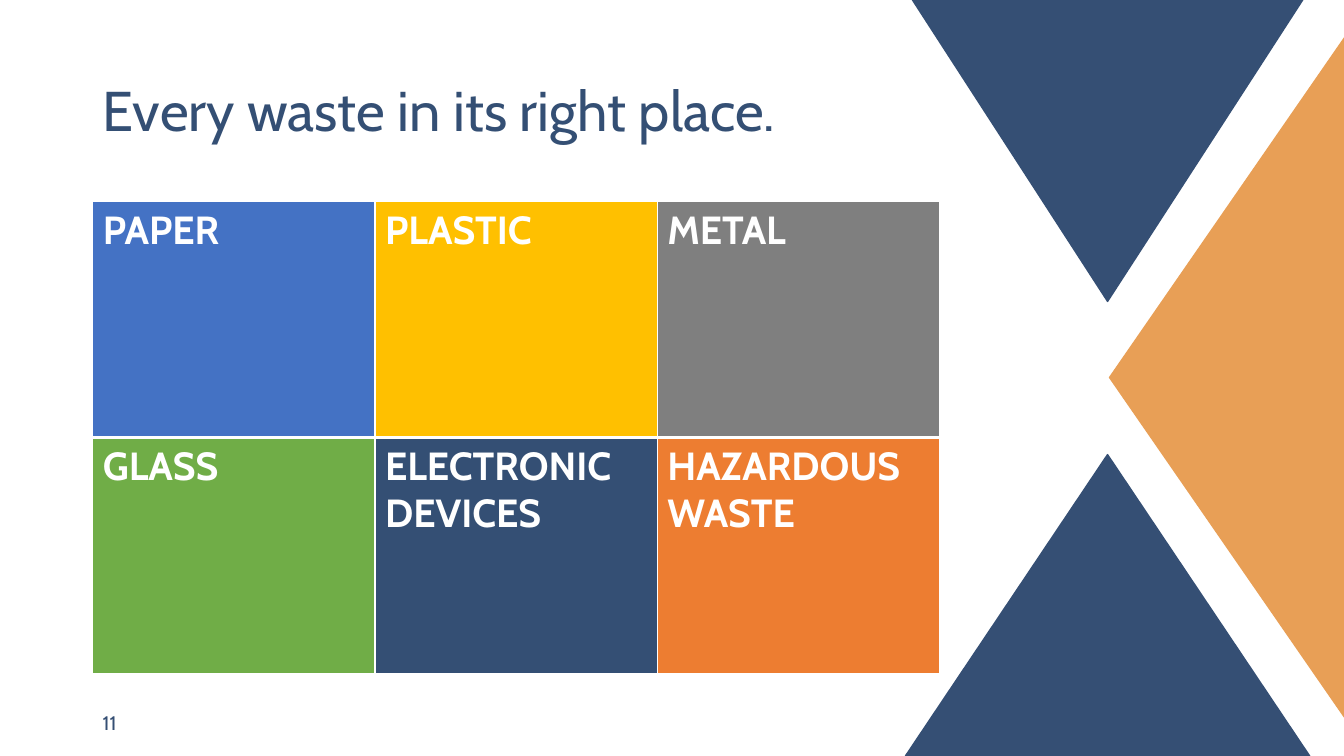
from dataclasses import dataclass

from lxml import etree
from pptx import Presentation
from pptx import util as u
from pptx.dml import color
from pptx.enum import shapes, text
from pptx.oxml import ns

TITLE_ONLY = 5
EMU_PER_PX = 9144


@dataclass(frozen=True)
class Theme:
    font: str = "Cabin"
    navy: str = "354F74"
    ink: str = "344F74"
    amber: str = "E89F56"
    white: str = "FFFFFF"
    paper: str = "4472C4"
    plastic: str = "FFC000"
    metal: str = "7F7F7F"
    glass: str = "70AD47"
    hazard: str = "ED7D31"
    title_size: int = 40
    bin_size: int = 28
    number_size: int = 14


def px(n):
    return u.Emu(n * EMU_PER_PX)


def rgb(value):
    return color.RGBColor.from_string(value)


def write(tf, content, *, font, size, ink, bold=False, spacing=None):
    p = tf.paragraphs[0]
    p.alignment = text.PP_ALIGN.LEFT
    if spacing:
        p.line_spacing = spacing
    r = p.add_run()
    r.text = content
    r.font.name = font
    r.font.size = u.Pt(size)
    r.font.bold = bold
    r.font.color.rgb = rgb(ink)


def border(cell, side, value, points):
    tc_pr = cell._tc.get_or_add_tcPr()
    ln = etree.SubElement(tc_pr, ns.qn(f"a:ln{side}"), w=str(u.Pt(points)))
    fill = etree.SubElement(ln, ns.qn("a:solidFill"))
    etree.SubElement(fill, ns.qn("a:srgbClr"), val=value)


class Deck:
    def __init__(self, theme, width, height):
        self.theme = theme
        self.prs = Presentation()
        self.prs.slide_width, self.prs.slide_height = px(width), px(height)
        self.s = None

    def slide(self):
        layout = self.prs.slide_layouts[TITLE_ONLY]
        self.s = self.prs.slides.add_slide(layout)

    def title(self, content, x, y, w, h):
        sp = self.s.shapes.title
        sp.left, sp.top, sp.width, sp.height = map(px, (x, y, w, h))
        tf = sp.text_frame
        tf.word_wrap = True
        tf.auto_size = text.MSO_AUTO_SIZE.NONE
        tf.vertical_anchor = text.MSO_ANCHOR.MIDDLE
        write(tf, content, font=self.theme.font, size=self.theme.title_size,
              ink=self.theme.ink, spacing=0.9)

    def label(self, content, x, y, w, h):
        tf = self.s.shapes.add_textbox(*map(px, (x, y, w, h))).text_frame
        tf.word_wrap = True
        tf.vertical_anchor = text.MSO_ANCHOR.MIDDLE
        write(tf, content, font=self.theme.font, size=self.theme.number_size,
              ink=self.theme.navy)

    def triangle(self, x, y, w, h, fill, rotation=0):
        sp = self.s.shapes.add_shape(
            shapes.MSO_SHAPE.ISOSCELES_TRIANGLE, *map(px, (x, y, w, h)))
        sp.rotation = rotation
        sp.shadow.inherit = False
        sp.fill.solid()
        sp.fill.fore_color.rgb = rgb(fill)
        sp.line.color.rgb = rgb(fill)
        sp.line.width = u.Pt(1)

    def bins(self, rows, x, y, col_w, row_h):
        count = len(rows[0])
        table = self.s.shapes.add_table(
            len(rows), count, px(x), px(y),
            px(col_w * count), px(row_h * len(rows))).table
        for col in table.columns:
            col.width = px(col_w)
        for i, row in enumerate(rows):
            table.rows[i].height = px(row_h)
            top = 3 if i else 1
            bottom = 3 if i < len(rows) - 1 else 1
            for j, (name, fill) in enumerate(row):
                cell = table.cell(i, j)
                widths = {"L": 1, "R": 1, "T": top, "B": bottom}
                for side, points in widths.items():
                    border(cell, side, self.theme.white, points)
                cell.fill.solid()
                cell.fill.fore_color.rgb = rgb(fill)
                write(cell.text_frame, name, font=self.theme.font,
                      size=self.theme.bin_size, ink=self.theme.white, bold=True)

    def save(self):
        self.prs.save("out.pptx")


def main():
    t = Theme()
    deck = Deck(t, 1333, 750)
    deck.slide()
    deck.triangle(898, 451, 401, 299, t.navy)
    deck.triangle(880, 258, 674, 233, t.amber, rotation=270)
    deck.triangle(905, 0, 387, 299, t.navy, rotation=180)
    deck.label("11", 92, 697, 300, 40)
    deck.title("Every waste in its right place.", 92, 40, 841, 145)
    deck.bins([
        [("PAPER", t.paper), ("PLASTIC", t.plastic), ("METAL", t.metal)],
        [("GLASS", t.glass), ("ELECTRONIC DEVICES", t.ink),
         ("HAZARDOUS WASTE", t.hazard)],
    ], 92, 200, 280, 234)
    deck.save()


if __name__ == "__main__":
    main()
